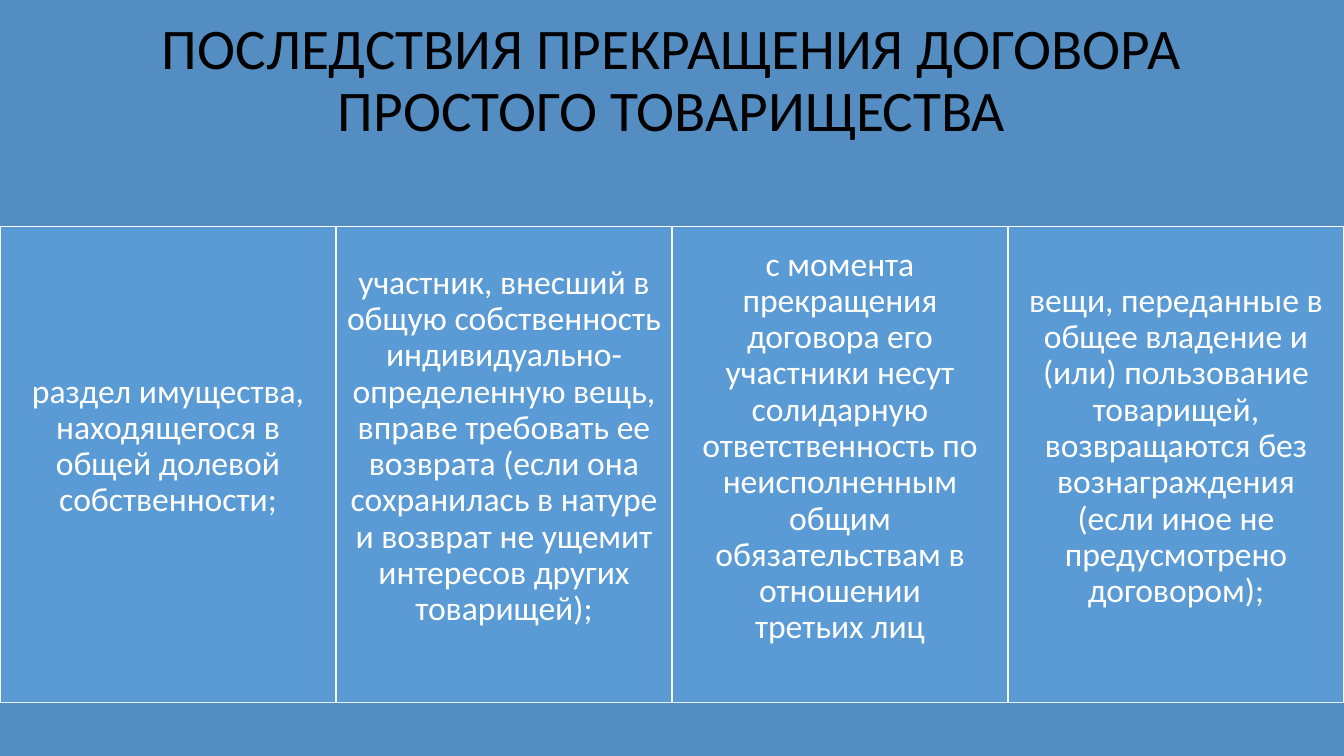
"""Builds a slide on the consequences of ending a simple partnership contract."""
from pptx import Presentation
from pptx.dml.color import RGBColor
from pptx.enum.shapes import MSO_SHAPE
from pptx.enum.text import MSO_ANCHOR, PP_ALIGN
from pptx.util import Pt

TITLE = "ПОСЛЕДСТВИЯ ПРЕКРАЩЕНИЯ ДОГОВОРА\nПРОСТОГО ТОВАРИЩЕСТВА"
EFFECTS = [
    "раздел имущества, находящегося в общей долевой собственности;",
    "участник, внесший в общую собственность индивидуально-определенную вещь, "
    "вправе требовать ее возврата (если она сохранилась в натуре и возврат "
    "не ущемит интересов других товарищей);",
    "с момента прекращения договора его участники несут солидарную "
    "ответственность по неисполненным общим обязательствам в отношении\n"
    "третьих лиц",
    "вещи, переданные в общее владение и (или) пользование товарищей,\n"
    "возвращаются без вознаграждения (если иное не предусмотрено договором);",
]

BAND = RGBColor(0x53, 0x8D, 0xC1)
CELL = RGBColor(0x5B, 0x9B, 0xD5)
BLACK = RGBColor(0, 0, 0)
WHITE = RGBColor(255, 255, 255)

WIDTH, HEIGHT = 960, 540
TOP, BODY = 162, 340
HEAD = {"size": 41, "color": BLACK, "inset": 12, "lift": 45}
NOTE = {"size": 24, "color": WHITE, "inset": 7.2, "lift": 26}


def add_box(slide, left, top, width, height, fill, edge=None):
    box = slide.shapes.add_shape(
        MSO_SHAPE.RECTANGLE, Pt(left), Pt(top), Pt(width), Pt(height))
    box.shadow.inherit = False
    box.fill.solid()
    box.fill.fore_color.rgb = fill
    if edge is None:
        box.line.fill.background()
    else:
        box.line.color.rgb = edge
        box.line.width = Pt(1)
    return box


def add_text(box, text, style):
    frame = box.text_frame
    inset = Pt(style["inset"])
    layout = {
        "word_wrap": True, "vertical_anchor": MSO_ANCHOR.MIDDLE,
        "margin_left": inset, "margin_right": inset, "margin_top": inset,
        "margin_bottom": Pt(style["inset"] + style["lift"]),
    }
    for name, value in layout.items():
        setattr(frame, name, value)
    para = frame.paragraphs[0]
    para.text = text
    para.alignment = PP_ALIGN.CENTER
    para.line_spacing = 0.9
    for run in para.runs:
        for name, value in {"name": "Calibri", "size": Pt(style["size"])}.items():
            setattr(run.font, name, value)
        run.font.color.rgb = style["color"]


def main():
    deck = Presentation()
    deck.slide_width, deck.slide_height = Pt(WIDTH), Pt(HEIGHT)
    slide = deck.slides.add_slide(deck.slide_layouts[6])
    add_text(add_box(slide, 0, 0, WIDTH, TOP, BAND), TITLE, HEAD)
    step = WIDTH / len(EFFECTS)
    for col, text in enumerate(EFFECTS):
        box = add_box(slide, col * step, TOP, step, BODY, CELL, WHITE)
        add_text(box, text, NOTE)
    foot = TOP + BODY
    add_box(slide, 0, foot, WIDTH, HEIGHT - foot, BAND)
    deck.save("out.pptx")


if __name__ == "__main__":
    main()
